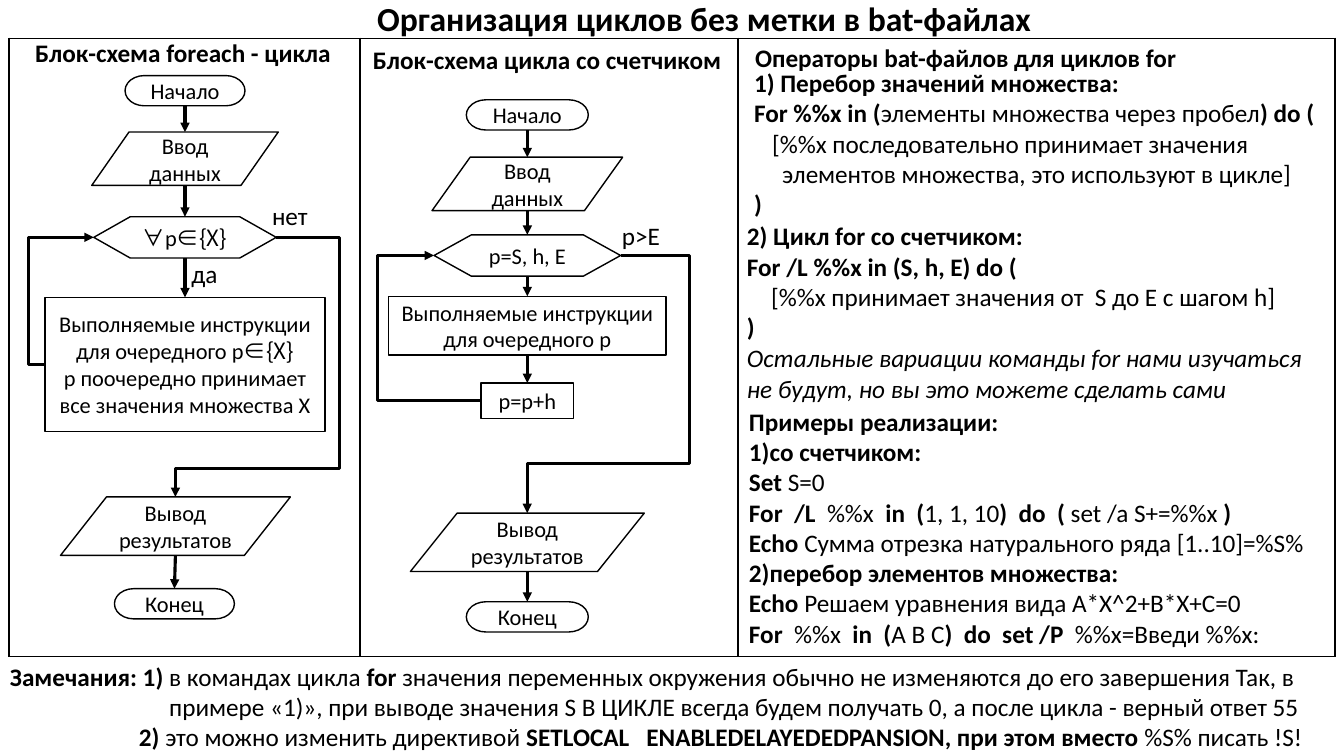
import pptx
import pptx.util
import pptx.dml.color
import pptx.enum.shapes
import pptx.enum.text
import pptx.oxml
import pptx.oxml.ns

deck = pptx.Presentation()
deck.slide_width = pptx.util.Inches(13.33)
deck.slide_height = pptx.util.Inches(7.5)
slide = deck.slides.add_slide(deck.slide_layouts[5])
shapes = slide.shapes

# Grid of 0.1 inch cells
CELL = pptx.util.Inches(0.1)
ink = pptx.dml.color.RGBColor.from_string("000000")
Kind = pptx.enum.shapes.MSO_SHAPE
Link = pptx.enum.shapes.MSO_CONNECTOR
Align = pptx.enum.text.PP_ALIGN
Anchor = pptx.enum.text.MSO_ANCHOR
Auto = pptx.enum.text.MSO_AUTO_SIZE
NS = pptx.oxml.ns.nsdecls("a")
TOP, LEFT, BOTTOM, RIGHT = range(4)


def write(frame, lines, size, look="bold", align=Align.LEFT):
    """Lines are (indent, text); a bar switches between bold and plain,
    or between the main font and the symbol font."""
    for n, (indent, text) in enumerate(lines):
        para = frame.paragraphs[0] if n == 0 else frame.add_paragraph()
        para.alignment = align
        if indent:
            para._p.get_or_add_pPr().set("marL", str(int(indent * CELL)))
        para.font.size = pptx.util.Pt(size)
        para.font.color.rgb = ink
        parts = text.split("|")
        if look == "symbol" and len(parts) > 1:
            for k, part in enumerate(parts):
                if part:
                    run = para.add_run()
                    run.text = part
                    run.font.name = "Noto Sans CJK JP" if k % 2 else "Calibri"
            continue
        para.font.name = "Calibri"
        if look == "italic":
            para.font.italic = True
        full = [k for k, part in enumerate(parts) if part]
        if look == "bold" and len(full) == 1:
            para.font.bold = full[0] % 2 == 0
        for k in full:
            run = para.add_run()
            run.text = parts[k]
            if look == "bold" and len(full) > 1:
                run.font.bold = k % 2 == 0


def arrow(kind, start, end, bends=()):
    """Arrow from start to end; bends are shares of its width and height."""
    x1, y1, x2, y2 = (int(v * CELL) for v in (*start, *end))
    line = shapes.add_connector(kind, x1, y1, x2, y2)
    line.line.color.rgb = ink
    line.line.width = pptx.util.Pt(2.25)
    line.line._get_or_add_ln().append(
        pptx.oxml.parse_xml(f'<a:tailEnd {NS} type="triangle"/>'))
    props = line._element.spPr
    props.append(pptx.oxml.parse_xml(f"<a:effectLst {NS}/>"))
    if bends:
        geom = props.find(pptx.oxml.ns.qn("a:prstGeom"))
        geom.set("prst", f"bentConnector{len(bends) + 2}")
        guides = "".join(f'<a:gd name="adj{n}" fmla="val {round(b * 100000)}"/>'
                         for n, b in enumerate(bends, 1))
        geom.replace(geom.find(pptx.oxml.ns.qn("a:avLst")),
                     pptx.oxml.parse_xml(f"<a:avLst {NS}>{guides}</a:avLst>"))
    return line


# Three-column frame
cols = (34.8, 37.5, 59.2)
frame = shapes.add_table(1, 3, int(0.9 * CELL), int(3.8 * CELL),
                         int(sum(cols) * CELL), int(61.3 * CELL))
table = frame.table
table.first_row = table.horz_banding = False
table.rows[0].height = int(61.3 * CELL)
for n, wide in enumerate(cols):
    table.columns[n].width = int(wide * CELL)
    cell = table.cell(0, n)
    for side in "LRTB":
        cell._tc.get_or_add_tcPr().append(pptx.oxml.parse_xml(
            f'<a:ln{side} {NS} w="12700"><a:solidFill><a:srgbClr val="000000"/>'
            f"</a:solidFill></a:ln{side}>"))
    cell.fill.background()

# Title
title = shapes.title
title.left, title.top, title.width, title.height = (
    int(v * CELL) for v in (36.4, -0.7, 68.4, 5))
title.text_frame.word_wrap = False
title.text_frame.auto_size = Auto.SHAPE_TO_FIT_TEXT
title.text_frame.vertical_anchor = Anchor.TOP
write(title.text_frame, [(0, "Организация циклов без метки в bat-файлах")], 24)

# Text boxes: left, top, width, height, wrap, look, lines
notes = [
    (2.5, 3.2, 31.6, 4, False, "bold", [(0, "Блок-схема foreach - цикла")]),
    (36, 3.9, 37.5, 4, False, "bold", [(0, "Блок-схема цикла со счетчиком")]),
    (26, 19.4, 5.6, 4, False, "bold", [(0, "|нет")]),
    (18, 25.1, 4.6, 4, False, "bold", [(0, "|да")]),
    (60.7, 21.4, 5.9, 4, False, "bold", [(0, "|p>E")]),
    (73.9, 3.7, 44.3, 4, False, "bold", [(0, "Операторы bat-файлов для циклов for")]),
    (73.8, 6.2, 58.2, 16.2, False, "bold", [
        (0, "1) Перебор значений множества:"),
        (0, "For %%x in (|элементы множества через пробел|) do ("),
        (1.8, "|[%%x последовательно принимает значения"),
        (2.8, "|элементов множества, это используют в цикле]"),
        (0, ")")]),
    (73.1, 21.4, 58.5, 13.1, True, "bold", [
        (0, "2) Цикл for со счетчиком:"),
        (0, "For /L %%x in (S, h, E) do ("),
        (2.4, "|[%%x принимает значения от  S до E с шагом h]"),
        (0, ")")]),
    (73.1, 33.5, 58.5, 7.1, True, "italic", [
        (0, "Остальные вариации команды for нами изучаться не будут, "
            "но вы это можете сделать сами")]),
    (73.3, 39.8, 59.9, 25.2, True, "bold", [
        (0, "Примеры реализации:"),
        (0, "1)со счетчиком:"),
        (0, "Set |S=0"),
        (0, "For  /L  |%%x|  in  (|1, 1, 10|)  do  (| set /a S+=%%x| )"),
        (0, "Echo |Сумма отрезка натурального ряда [1..10]=%S%"),
        (0, "2)перебор элементов множества:"),
        (0, "Echo |Решаем уравнения вида A*X^2+B*X+C=0"),
        (0, "For  |%%x|  in  (|A B C|)  do  set /P  |%%x=Введи %%x:")]),
    (0, 65.1, 133.3, 10.1, True, "bold", [
        (0, "Замечания: 1) |в командах цикла |for |значения переменных окружения "
            "обычно не изменяются до его завершения Так, в"),
        (15.8, "|примере «1)», при выводе значения S В ЦИКЛЕ всегда будем "
               "получать 0, а после цикла - верный ответ 55"),
        (12.8, "2) |это можно изменить директивой |SETLOCAL   "
               "ENABLEDELAYEDEDPANSION, при этом вместо |%S% писать !S!")]),
]
for *place, wrap, look, lines in notes:
    box = shapes.add_textbox(*(int(v * CELL) for v in place))
    box.text_frame.word_wrap = wrap
    box.text_frame.auto_size = Auto.SHAPE_TO_FIT_TEXT
    write(box.text_frame, lines, 18, look)

# Flowcharts: blocks as kind, middle, top, width, height, lines
DATA, ENDS = Kind.FLOWCHART_DATA, Kind.FLOWCHART_TERMINATOR
LOOP, STEP = Kind.FLOWCHART_PREPARATION, Kind.FLOWCHART_PROCESS
each = [
    (ENDS, 18.35, 7.5, 11.9, 3, ["Начало"]),
    (DATA, 18.35, 13.1, 18.5, 5.3, ["Ввод данных"]),
    (LOOP, 18.35, 21.5, 18.1, 4.1, ["|∀|p|∈{X}"]),
    (STEP, 18.35, 29.5, 27.8, 13.3, [
        "Выполняемые инструкции для очередного p|∈{X}",
        "p поочередно принимает все значения множества X"]),
    (DATA, 17.4, 49.3, 22.8, 5.8, ["Вывод результатов"]),
    (ENDS, 17.3, 58.4, 11.9, 3, ["Конец"]),
]
count = [
    (ENDS, 52.3, 9.9, 12.1, 3, ["Начало"]),
    (DATA, 52.3, 15.6, 18.9, 5.3, ["Ввод данных"]),
    (LOOP, 52.3, 23.3, 18.5, 4.1, ["p=S, h, E"]),
    (STEP, 52.3, 29.4, 27.5, 5.8, ["Выполняемые инструкции для очередного p"]),
    (STEP, 52.3, 38, 9.2, 3.5, ["p=p+h"]),
    (DATA, 52.3, 50.9, 23.2, 5.8, ["Вывод результатов"]),
    (ENDS, 52.3, 59.7, 12.1, 3, ["Конец"]),
]

# Each chart: blocks, right lane, level of the way out, left lane
for blocks, right, level, left in ((each, 33.7, 46.5, 2.8), (count, 68.4, 46, 37.4)):
    drawn = []
    for kind, mid, top, wide, high, lines in blocks:
        block = shapes.add_shape(kind, *(int(v * CELL) for v in
                                         (mid - wide / 2, top, wide, high)))
        block.shadow.inherit = False
        block.fill.background()
        block.line.color.rgb = ink
        block.line.width = pptx.util.Pt(1)
        block.text_frame.word_wrap = True
        block.text_frame.vertical_anchor = Anchor.MIDDLE
        write(block.text_frame, [(0, text) for text in lines], 16,
              "symbol", Align.CENTER)
        drawn.append(block)

    # Straight arrows down, except between the last step and the output
    for n, (above, below) in enumerate(zip(blocks, blocks[1:])):
        if n == len(blocks) - 3:
            continue
        line = arrow(Link.STRAIGHT, (above[1], above[2] + above[4]),
                     (below[1], below[2]))
        if above[0] != DATA:
            line.begin_connect(drawn[n], BOTTOM)
        if below[0] != DATA:
            line.end_connect(drawn[n + 1], TOP)

    # Way out of the loop on the right, way back on the left
    loop, last, out = blocks[2], blocks[-3], blocks[-2]
    row = loop[2] + loop[4] / 2
    edge = loop[1] + loop[3] / 2
    arrow(Link.ELBOW, (edge, row), (out[1], out[2]),
          ((right - edge) / (out[1] - edge), (level - row) / (out[2] - row)))
    side = last[1] - last[3] / 2
    entry = loop[1] - loop[3] / 2
    arrow(Link.ELBOW, (side, last[2] + last[4] / 2), (entry, row),
          ((left - side) / (entry - side),))

deck.save("out.pptx")
